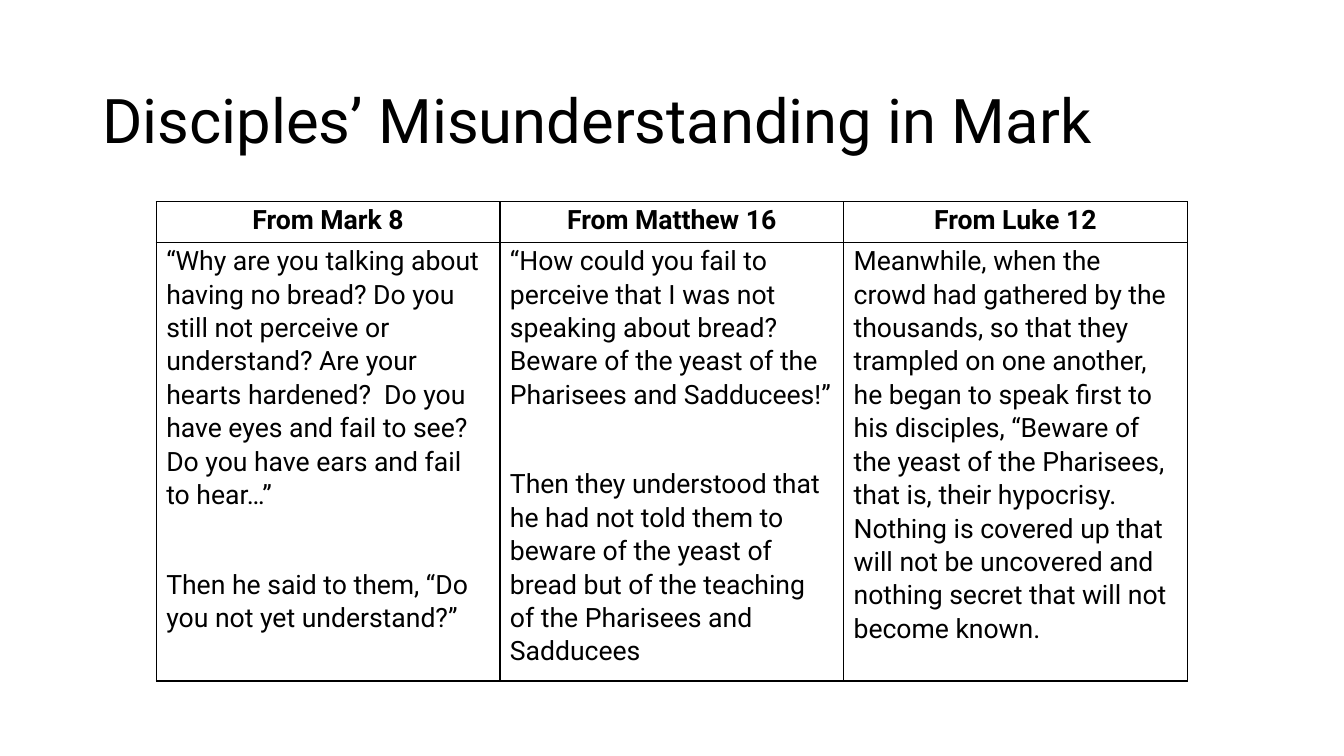
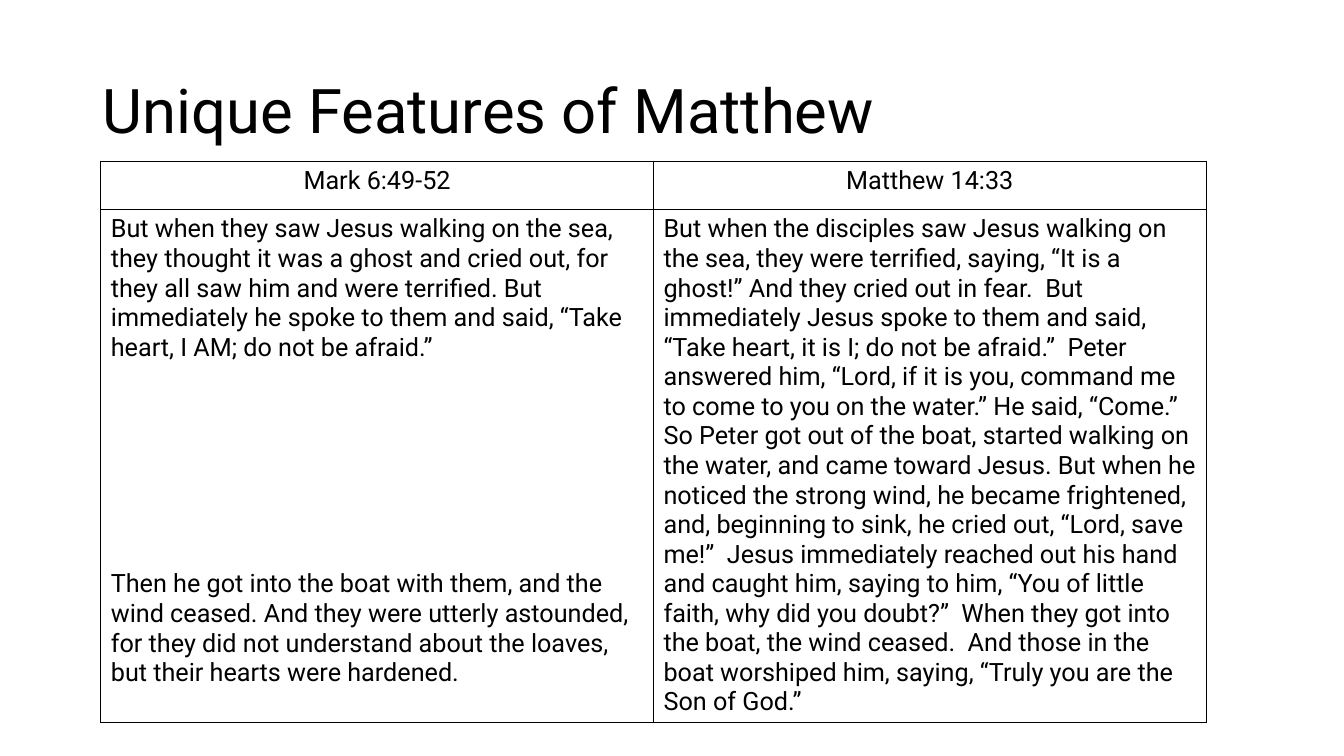
"""Build two slides that compare gospel passages in tables."""
from dataclasses import dataclass

from lxml import etree
from pptx import Presentation
from pptx.dml.color import RGBColor
from pptx.enum.text import MSO_ANCHOR, MSO_AUTO_SIZE, PP_ALIGN
from pptx.oxml.ns import qn
from pptx.util import Pt

LEFT, CENTER = PP_ALIGN.LEFT, PP_ALIGN.CENTER
MIDDLE = MSO_ANCHOR.MIDDLE
FIXED = MSO_AUTO_SIZE.NONE
TITLE_ONLY = 5


@dataclass(frozen=True)
class Theme:
    face: str = "Roboto"
    ink: str = "000000"
    title: float = 44
    rule: float = 1


@dataclass(frozen=True)
class Style:
    size: float
    bold: bool
    pitch: float
    after: float
    gap: float
    pad: tuple


THEME = Theme()
LOOSE = Style(size=19, bold=True, pitch=1.07, after=8, gap=32, pad=(0.7, 0))
PLAIN = Style(size=18, bold=False, pitch=1, after=0, gap=148, pad=(3.6, 3.6))

MARK_8 = [
    "“Why are you talking about having no bread? Do you still not perceive or "
    "understand? Are your hearts hardened?  Do you have eyes and fail to see? "
    "Do you have ears and fail to hear…”",
    "Then he said to them, “Do you not yet understand?”",
]
MATTHEW_16 = [
    "“How could you fail to perceive that I was not speaking about bread? "
    "Beware of the yeast of the Pharisees and Sadducees!”",
    "Then they understood that he had not told them to beware of the yeast of "
    "bread but of the teaching of the Pharisees and Sadducees",
]
LUKE_12 = [
    "Meanwhile, when the crowd had gathered by the thousands, so that they "
    "trampled on one another, he began to speak first to his disciples, "
    "“Beware of the yeast of the Pharisees, that is, their hypocrisy.  "
    "Nothing is covered up that will not be uncovered and nothing secret that "
    "will not become known.",
]
MARK_6 = [
    "But when they saw Jesus walking on the sea, they thought it was a ghost "
    "and cried out, for they all saw him and were terrified. But immediately "
    "he spoke to them and said, “Take heart, I AM; do not be afraid.”",
    "Then he got into the boat with them, and the wind ceased. And they were "
    "utterly astounded, for they did not understand about the loaves, but "
    "their hearts were hardened.",
]
MATTHEW_14 = [
    "But when the disciples saw Jesus walking on the sea, they were terrified, "
    "saying, “It is a ghost!” And they cried out in fear.  But immediately "
    "Jesus spoke to them and said, “Take heart, it is I; do not be afraid.”  "
    "Peter answered him, “Lord, if it is you, command me to come to you on the "
    "water.” He said, “Come.” So Peter got out of the boat, started walking on "
    "the water, and came toward Jesus. But when he noticed the strong wind, he "
    "became frightened, and, beginning to sink, he cried out, “Lord, save "
    "me!”  Jesus immediately reached out his hand and caught him, saying to "
    "him, “You of little faith, why did you doubt?”  When they got into the "
    "boat, the wind ceased.  And those in the boat worshiped him, saying, "
    "“Truly you are the Son of God.”",
]


def set_font(para, size, bold=False):
    font = para.font
    font.name, font.size, font.bold = THEME.face, Pt(size), bold
    font.color.rgb = RGBColor.from_string(THEME.ink)


def add_page(deck, text, top, height):
    page = deck.slides.add_slide(deck.slide_layouts[TITLE_ONLY])
    title = page.shapes.title
    title.left, title.top = Pt(66), Pt(top)
    title.width, title.height = Pt(828), Pt(height)
    frame = title.text_frame
    frame.text = text
    frame.word_wrap, frame.auto_size = True, FIXED
    frame.vertical_anchor = MIDDLE
    para = frame.paragraphs[0]
    para.alignment, para.line_spacing = LEFT, 0.9
    set_font(para, THEME.title)
    return page


def add_rules(cell):
    props = cell._tc.get_or_add_tcPr()
    for spot, side in enumerate(("lnL", "lnR", "lnT", "lnB")):
        line = etree.Element(qn(f"a:{side}"), w=str(Pt(THEME.rule)))
        fill = etree.SubElement(line, qn("a:solidFill"))
        etree.SubElement(fill, qn("a:srgbClr"), val=THEME.ink)
        props.insert(spot, line)


def fill_cell(cell, texts, style, align, bold):
    cell.fill.background()
    add_rules(cell)
    cell.margin_left = cell.margin_right = Pt(7.2)
    cell.margin_top, cell.margin_bottom = map(Pt, style.pad)
    frame = cell.text_frame
    frame.text = "\n".join(texts)
    for spot, para in enumerate(frame.paragraphs):
        para.alignment, para.line_spacing = align, style.pitch
        para.space_before = Pt(style.gap if spot else 0)
        para.space_after = Pt(style.after)
        set_font(para, style.size, bold)


def add_grid(page, place, width, rows, columns, style):
    left, top = place
    count = len(columns)
    table = page.shapes.add_table(
        len(rows), count, Pt(left), Pt(top), Pt(width * count), Pt(sum(rows))
    ).table
    table.first_row = table.horz_banding = False
    for row, height in zip(table.rows, rows):
        row.height = Pt(height)
    for col, (head, texts) in enumerate(columns.items()):
        table.columns[col].width = Pt(width)
        fill_cell(table.cell(0, col), [head], style, CENTER, style.bold)
        fill_cell(table.cell(1, col), texts, style, LEFT, False)


def main():
    deck = Presentation()
    deck.slide_width, deck.slide_height = Pt(960), Pt(540)

    page = add_page(deck, "Disciples’ Misunderstanding in Mark", 44, 89)
    columns = {
        "From Mark 8": MARK_8,
        "From Matthew 16": MATTHEW_16,
        "From Luke 12": LUKE_12,
    }
    add_grid(page, (111.6, 144), 245.5, (29.5, 313), columns, LOOSE)

    page = add_page(deck, "Unique Features of Matthew", 28.8, 104.4)
    columns = {"Mark 6:49-52": MARK_6, "Matthew 14:33": MATTHEW_14}
    add_grid(page, (72, 115.2), 394.8, (34.5, 366), columns, PLAIN)

    deck.save("out.pptx")


if __name__ == "__main__":
    main()
